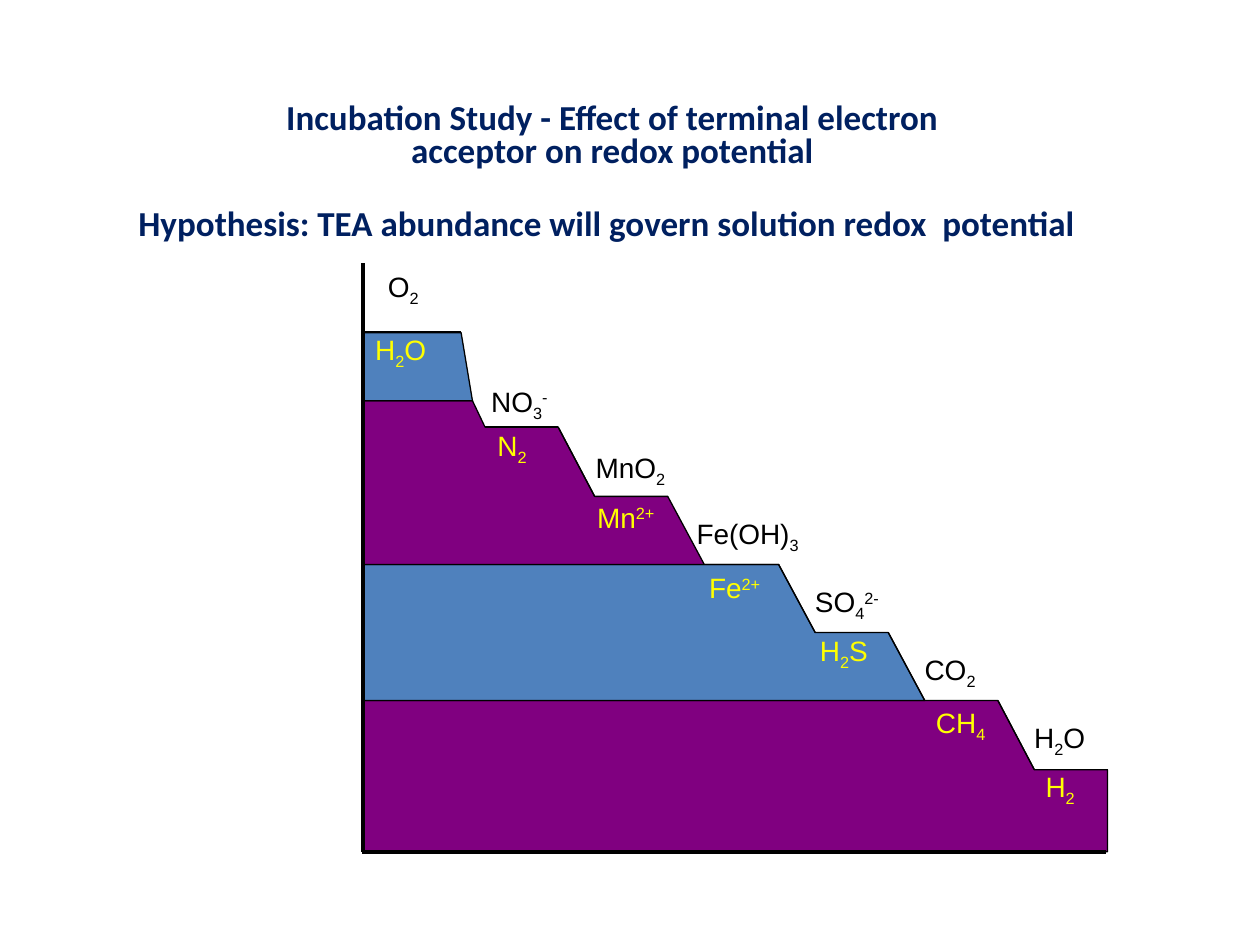
from itertools import pairwise

from lxml.etree import SubElement
from pptx import Presentation
from pptx.dml.color import RGBColor
from pptx.enum.shapes import MSO_CONNECTOR as Connector
from pptx.enum.text import MSO_ANCHOR as Anchor, MSO_AUTO_SIZE as AutoSize, PP_ALIGN as Align
from pptx.oxml.ns import qn
from pptx.util import Pt

EMU_PER_PX = 9144
BLACK, YELLOW, NAVY = "000000", "FFFF00", "002060"
PURPLE, BLUE = "800080", "4F81BD"
BASELINES = {"_": "-25000", "^": "30000"}

LAYERS = [
    (PURPLE, [(288, 556), (792, 556), (821, 611), (879, 611), (879, 676), (288, 676)]),
    (BLUE, [(288, 448), (618, 448), (647, 502), (705, 502), (734, 556), (288, 556)]),
    (PURPLE, [(288, 318), (375, 318), (385, 339), (443, 339), (472, 394),
              (530, 394), (559, 448), (618, 448), (288, 448)]),
    (BLUE, [(288, 264), (366, 264), (375, 318), (288, 318)]),
]
AXES = [[(288, 209), (288, 676)], [(287, 676), (878, 676)]]
STEPS = [
    [(288, 263), (366, 263)],
    [(385, 339), (443, 339), (472, 394), (530, 394)],
    [(618, 448), (647, 502), (705, 502), (734, 556), (792, 556),
     (821, 611), (879, 611), (879, 665)],
]
ACCEPTORS = [
    (298, 209, 68, ["O", "_2"]),
    (380, 300, 97, ["NO", "_3", "^-"]),
    (463, 353, 97, ["MnO", "_2"]),
    (543, 405, 126, ["Fe(OH)", "_3"]),
    (637, 459, 126, ["SO", "_4", "^2-"]),
    (724, 513, 126, ["CO", "_2"]),
    (811, 567, 126, ["H", "_2", "O"]),
]
PRODUCTS = [
    (288, 259, 77, ["H", "_2", "O"]),
    (385, 335, 97, ["N", "_2"]),
    (464, 392, 97, ["Mn", "^2+"]),
    (553, 448, 126, ["Fe", "^2+"]),
    (641, 498, 126, ["H", "_2", "S"]),
    (733, 555, 126, ["CH", "_4"]),
    (820, 606, 126, ["H", "_2"]),
]


def px(length):
    return length * EMU_PER_PX


def rgb(color):
    return RGBColor.from_string(color)


def add_layer(slide, color, points):
    builder = slide.shapes.build_freeform(*points[0], scale=EMU_PER_PX)
    builder.add_line_segments(points[1:], close=True)
    shape = builder.convert_to_shape()
    shape.shadow.inherit = False
    shape.fill.solid()
    shape.fill.fore_color.rgb = rgb(color)
    shape.line.color.rgb = rgb(BLACK)
    shape.line.width = Pt(0.75)


def add_lines(slide, points, width):
    for start, end in pairwise(points):
        line = slide.shapes.add_connector(Connector.STRAIGHT, *map(px, start + end))
        line.line.color.rgb = rgb(BLACK)
        line.line.width = Pt(width)
        SubElement(line._element.spPr, qn("a:effectLst"))


def add_text(slide, left, top, width, height, font, size, color):
    box = slide.shapes.add_textbox(*map(px, (left, top, width, height)))
    box.text_frame.word_wrap = True
    paragraph = box.text_frame.paragraphs[0]
    paragraph.font.name = font
    paragraph.font.size = Pt(size)
    paragraph.font.color.rgb = rgb(color)
    return box.text_frame, paragraph


def add_formula(slide, left, top, width, parts, color):
    frame, paragraph = add_text(slide, left, top, width, 37, "Arial", 16, color)
    frame.auto_size = AutoSize.SHAPE_TO_FIT_TEXT
    for part in parts:
        run = paragraph.add_run()
        run.text = part.lstrip("_^")
        if part[0] in BASELINES:
            run._r.get_or_add_rPr().set("baseline", BASELINES[part[0]])


def add_heading(slide, left, top, width, text, spacing, alignment):
    frame, paragraph = add_text(slide, left, top, width, 69, "Calibri", 20, NAVY)
    frame.vertical_anchor = Anchor.MIDDLE
    paragraph.font.bold = True
    paragraph.line_spacing = spacing
    paragraph.alignment = alignment
    paragraph.add_run().text = text


def main():
    presentation = Presentation()
    presentation.slide_width = px(1000)
    presentation.slide_height = px(750)
    slide = presentation.slides.add_slide(presentation.slide_layouts[6])

    add_heading(slide, 191, 74, 590,
                "Incubation Study - Effect of terminal electron acceptor on redox potential",
                0.8, Align.CENTER)
    add_heading(slide, 100, 144, 765,
                "Hypothesis: TEA abundance will govern solution redox  potential",
                0.9, Align.LEFT)
    for color, points in LAYERS:
        add_layer(slide, color, points)
    for points in AXES:
        add_lines(slide, points, 2.25)
    for points in STEPS:
        add_lines(slide, points, 0.75)
    for formulas, color in ((ACCEPTORS, BLACK), (PRODUCTS, YELLOW)):
        for left, top, width, parts in formulas:
            add_formula(slide, left, top, width, parts, color)

    presentation.save("out.pptx")


if __name__ == "__main__":
    main()
